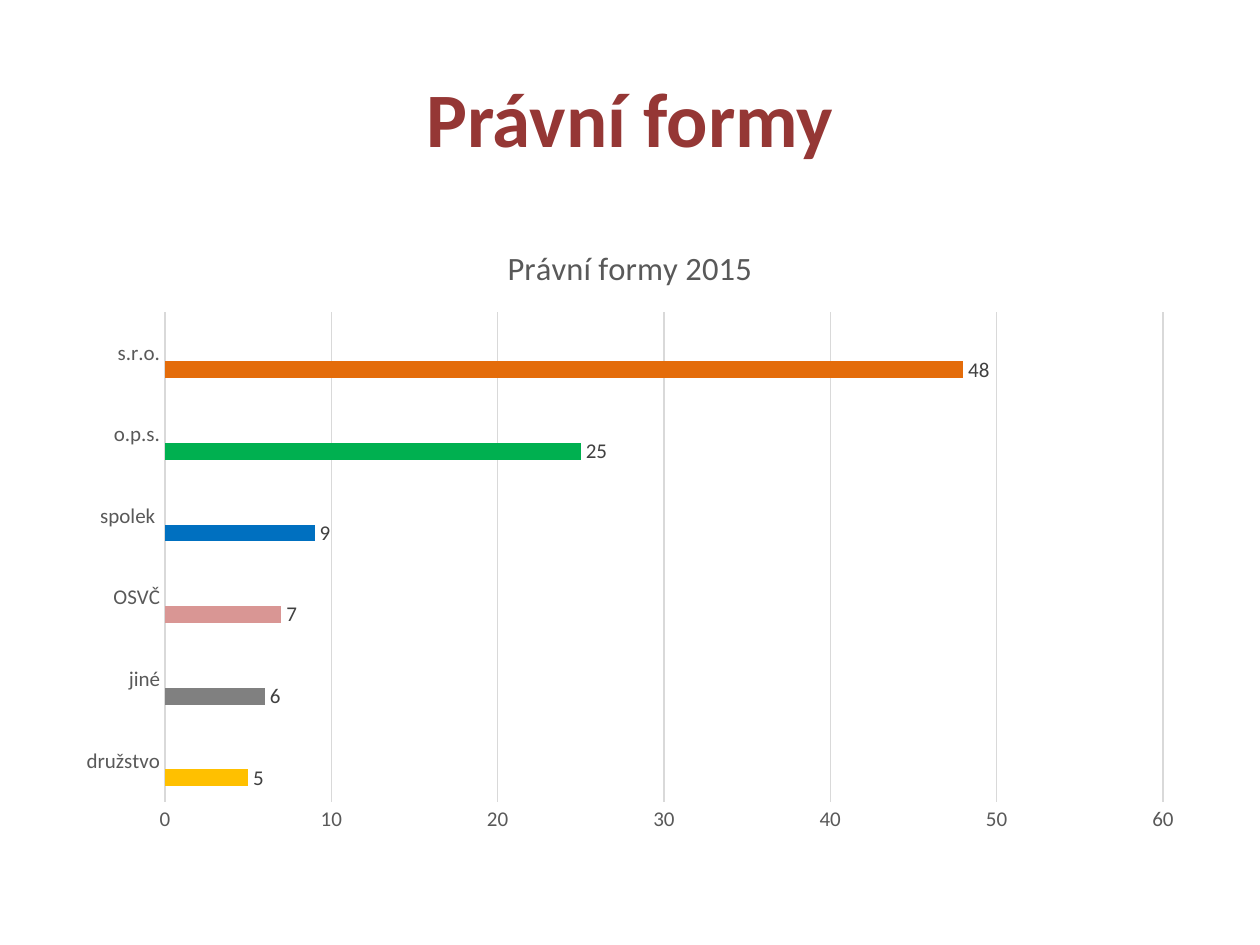
from dataclasses import dataclass

from lxml import etree
from pptx import Presentation
from pptx.chart.data import CategoryChartData
from pptx.dml.color import RGBColor
from pptx.enum.chart import XL_CHART_TYPE, XL_LABEL_POSITION, XL_TICK_MARK
from pptx.enum.text import MSO_ANCHOR, PP_ALIGN
from pptx.oxml.ns import qn
from pptx.util import Inches, Pt

BAR_CLUSTERED = XL_CHART_TYPE.BAR_CLUSTERED
OUTSIDE_END = XL_LABEL_POSITION.OUTSIDE_END
NO_TICK = XL_TICK_MARK.NONE
MIDDLE = MSO_ANCHOR.MIDDLE
CENTER = PP_ALIGN.CENTER


@dataclass(frozen=True)
class Theme:
    font: str = "Calibri"
    heading: str = "953735"
    axis_text: str = "595959"
    label_text: str = "404040"
    grid: str = "D9D9D9"
    heading_size: float = 44
    chart_title_size: float = 18.6
    chart_text_size: float = 12
    grid_width: float = 0.75


THEME = Theme()

# Category, value and bar colour, from the bottom of the chart upwards
LEGAL_FORMS = [
    ("družstvo", 5, "FFC000"),
    ("jiné", 6, "808080"),
    ("OSVČ", 7, "D99694"),
    ("spolek ", 9, "0070C0"),
    ("o.p.s.", 25, "00B050"),
    ("s.r.o.", 48, "E46C0A"),
]
# Plot area as fractions of the chart box
PLOT_LAYOUT = {"x": 0.09, "y": 0.147, "w": 0.88, "h": 0.785}


def set_attributes(target, values):
    for name, value in values.items():
        setattr(target, name, value)


def format_font(font, size, color, bold=False):
    set_attributes(font, {"name": THEME.font, "size": Pt(size), "bold": bold})
    font.color.rgb = RGBColor.from_string(color)


def format_line(line):
    line.color.rgb = RGBColor.from_string(THEME.grid)
    line.width = Pt(THEME.grid_width)


def set_plot_layout(chart):
    """Fix the inner plot area, which needs XML."""
    plot_area = chart.plots[0]._element.getparent()
    for old_layout in plot_area.findall(qn("c:layout")):
        plot_area.remove(old_layout)
    layout = etree.Element(qn("c:layout"))
    manual = etree.SubElement(layout, qn("c:manualLayout"))
    settings = {"layoutTarget": "inner", "xMode": "edge", "yMode": "edge", **PLOT_LAYOUT}
    for name, value in settings.items():
        etree.SubElement(manual, qn(f"c:{name}")).set("val", str(value))
    plot_area.insert(0, layout)


def add_title(slide, text, left, top, width, height):
    title = slide.shapes.title
    set_attributes(title, {"left": left, "top": top, "width": width, "height": height})
    frame = title.text_frame
    frame.text = text
    frame.vertical_anchor = MIDDLE
    paragraph = frame.paragraphs[0]
    paragraph.alignment = CENTER
    format_font(paragraph.runs[0].font, THEME.heading_size, THEME.heading, bold=True)


def add_legal_forms_chart(slide, title, left, top, width, height):
    # Two empty series keep their room beside each bar
    names, values, colors = zip(*LEGAL_FORMS)
    empty = [None] * len(values)
    data = CategoryChartData()
    data.categories = names
    for number, series_values in enumerate((values, empty, empty), start=1):
        data.add_series(f"Series {number}", series_values)
    chart = slide.shapes.add_chart(BAR_CLUSTERED, left, top, width, height, data).chart
    chart.has_legend = False
    format_font(chart.font, THEME.chart_text_size, THEME.axis_text)

    # Chart title
    chart.has_title = True
    chart.chart_title.text_frame.text = title
    title_run = chart.chart_title.text_frame.paragraphs[0].runs[0]
    format_font(title_run.font, THEME.chart_title_size, THEME.axis_text)

    # Axes and gridlines
    for axis in (chart.category_axis, chart.value_axis):
        set_attributes(axis, {"major_tick_mark": NO_TICK, "minor_tick_mark": NO_TICK})
        format_font(axis.tick_labels.font, THEME.chart_text_size, THEME.axis_text)
    format_line(chart.category_axis.format.line)
    value_axis = chart.value_axis
    set_attributes(value_axis, {"minimum_scale": 0, "maximum_scale": 60,
                                "major_unit": 10, "has_major_gridlines": True})
    value_axis.format.line.fill.background()
    format_line(value_axis.major_gridlines.format.line)

    # Bars and their values
    plot = chart.plots[0]
    set_attributes(plot, {"gap_width": 182, "overlap": 0, "vary_by_categories": False})
    series = plot.series[0]
    for index, color in enumerate(colors):
        fill = series.points[index].format.fill
        fill.solid()
        fill.fore_color.rgb = RGBColor.from_string(color)
    labels = series.data_labels
    set_attributes(labels, {"show_value": True, "position": OUTSIDE_END})
    format_font(labels.font, THEME.chart_text_size, THEME.label_text)
    set_plot_layout(chart)


def main():
    presentation = Presentation()
    set_attributes(presentation, {"slide_width": Inches(10), "slide_height": Inches(7.5)})
    slide = presentation.slides.add_slide(presentation.slide_layouts[5])
    left, width = Inches(0.5), Inches(9)
    add_title(slide, "Právní formy", left, Inches(0.3), width, Inches(1.25))
    add_legal_forms_chart(slide, "Právní formy 2015", left, Inches(1.75), width, Inches(4.95))
    presentation.save("out.pptx")


if __name__ == "__main__":
    main()
